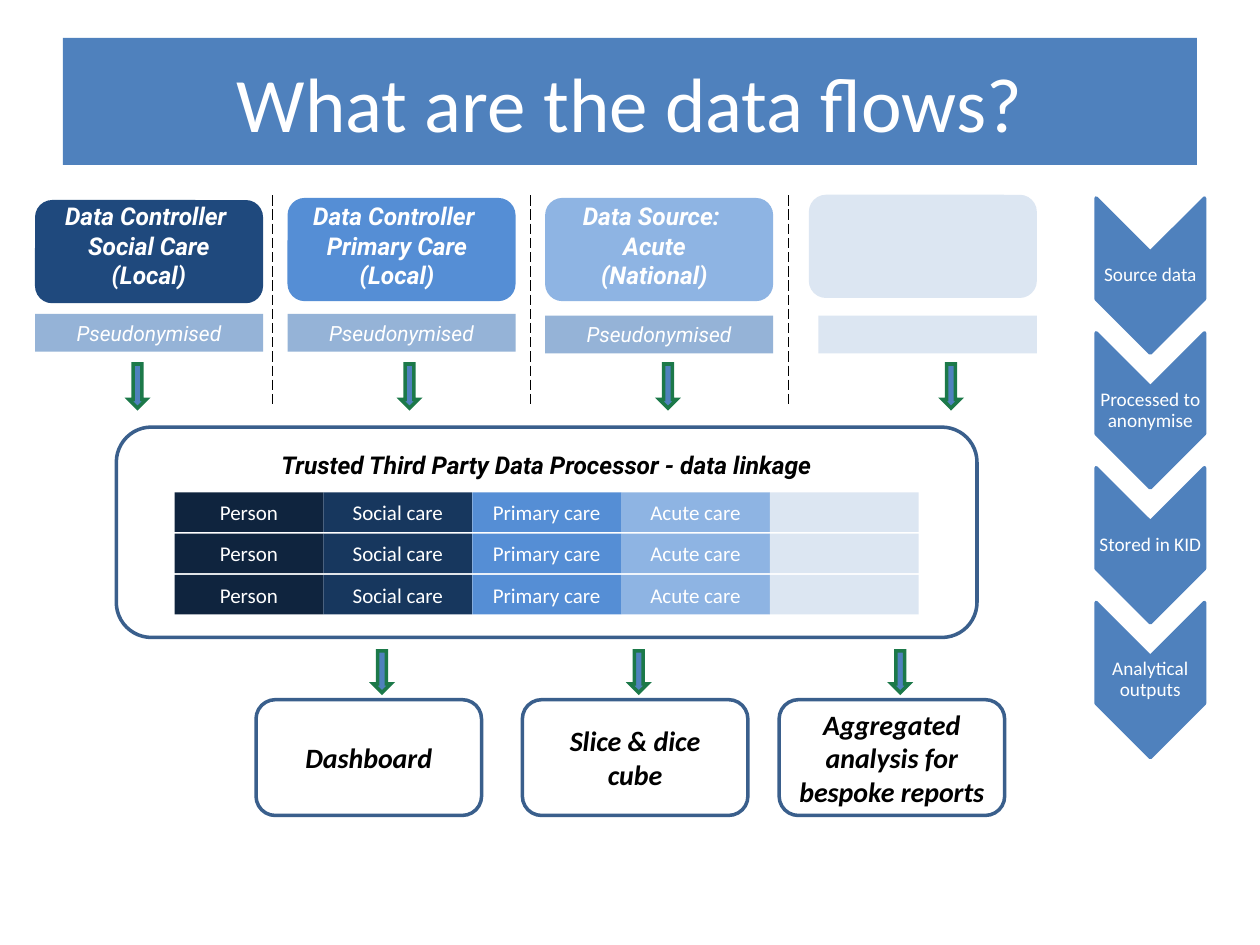
from dataclasses import dataclass

from lxml.etree import SubElement
from pptx import Presentation
from pptx.dml.color import RGBColor
from pptx.enum.dml import MSO_LINE
from pptx.enum.shapes import MSO_CONNECTOR, MSO_SHAPE
from pptx.enum.text import MSO_ANCHOR, PP_ALIGN
from pptx.oxml.ns import qn
from pptx.util import Pt


@dataclass(frozen=True)
class Theme:
    body: str = "Calibri"
    label: str = "Roboto"
    white: str = "FFFFFF"
    black: str = "000000"
    accent: str = "4F81BD"
    outline: str = "3A5F8C"
    arrow_edge: str = "1C7949"
    social: str = "1F497D"
    primary: str = "558ED5"
    acute: str = "8EB4E3"
    other: str = "DCE6F2"
    pseudonym: str = "95B3D7"
    person: str = "0F243E"
    social_cell: str = "17375E"
    title_size: float = 44
    output_size: float = 16
    heading_size: float = 14
    text_size: float = 12
    stage_size: float = 11
    edge: float = 2
    hairline: float = 0.75


@dataclass(frozen=True)
class Box:
    left: float
    top: float
    width: float
    height: float

    def lengths(self):
        return Pt(self.left), Pt(self.top), Pt(self.width), Pt(self.height)


THEME = Theme()


def paint(shape, fill, edge=None):
    shape.shadow.inherit = False
    shape.fill.solid()
    shape.fill.fore_color.rgb = RGBColor.from_string(fill)
    if edge:
        shape.line.color.rgb = RGBColor.from_string(edge)
        shape.line.width = Pt(THEME.edge)
    else:
        shape.line.fill.background()
    return shape


def add_block(slide, preset, box, fill, edge=None):
    return paint(slide.shapes.add_shape(preset, *box.lengths()), fill, edge)


def write(shape, text, size, font=THEME.body, color=THEME.white, bold=False,
          italic=False, anchor=MSO_ANCHOR.MIDDLE, margins=(7.2, 3.6), spacing=None):
    frame = shape.text_frame
    frame.word_wrap = True
    frame.vertical_anchor = anchor
    frame.margin_left = frame.margin_right = Pt(margins[0])
    frame.margin_top = frame.margin_bottom = Pt(margins[1])
    frame.text = text
    for paragraph in frame.paragraphs:
        paragraph.alignment = PP_ALIGN.CENTER
        paragraph.line_spacing = spacing
        paragraph.font.name = font
        paragraph.font.size = Pt(size)
        paragraph.font.bold = bold
        paragraph.font.italic = italic
        paragraph.font.color.rgb = RGBColor.from_string(color)


def add_title(slide, box):
    banner = add_block(slide, MSO_SHAPE.RECTANGLE, box, THEME.accent)
    write(banner, "What are the data flows?", THEME.title_size)


def add_flow_arrow(slide, center, top, height):
    box = Box(center - 5, top, 10, height)
    arrow = add_block(slide, MSO_SHAPE.DOWN_ARROW, box, THEME.accent, THEME.arrow_edge)
    SubElement(arrow.line._get_or_add_ln(), qn("a:miter"), lim="800000")


def add_source(slide, box, heading, heading_left, fill, pseudonym_box, arrow_center):
    add_block(slide, MSO_SHAPE.ROUNDED_RECTANGLE, box, fill)
    pseudonym_fill = THEME.pseudonym if heading else fill
    pseudonym = add_block(slide, MSO_SHAPE.RECTANGLE, pseudonym_box, pseudonym_fill)
    if heading:
        heading_box = Box(heading_left, 111.6, 141.8, 58)
        write(slide.shapes.add_textbox(*heading_box.lengths()), heading,
              THEME.heading_size, THEME.label, bold=True, italic=True,
              anchor=MSO_ANCHOR.TOP)
        write(pseudonym, "Pseudonymised", THEME.text_size, THEME.label, italic=True)
    add_flow_arrow(slide, arrow_center, 208, 25.2)


def add_divider(slide, x, top, bottom):
    divider = slide.shapes.add_connector(
        MSO_CONNECTOR.STRAIGHT, Pt(x), Pt(top), Pt(x), Pt(bottom))
    divider.line.color.rgb = RGBColor.from_string(THEME.black)
    divider.line.width = Pt(THEME.hairline)
    divider.line.dash_style = MSO_LINE.LONG_DASH
    SubElement(divider._element.spPr, qn("a:effectLst"))


def add_sources(slide, box):
    sources = [
        (20, 114.3, "Data Controller \nSocial Care\n(Local)", 14.2, THEME.social, 0, 179.4, 78.6),
        (164.3, 113.1, "Data Controller \nPrimary Care\n(Local)", 156, THEME.primary, 0, 179.4, 234),
        (311.5, 113.1, "Data Source: \nAcute\n(National)", 303.1, THEME.acute, 0, 180.4, 381.7),
        (462.2, 111.3, None, None, THEME.other, 5.5, 180.4, 543.5),
    ]
    width = 130.3
    for left, top, heading, heading_left, fill, indent, pseudonym_top, arrow_center in sources:
        add_source(slide, Box(left, top, width, 59), heading, heading_left, fill,
                   Box(left + indent, pseudonym_top, width - indent, 21.6), arrow_center)
    for x in (155.8, 303.1, 450.7):
        add_divider(slide, x, box.top, box.top + box.height)


def add_processor(slide, box):
    panel = add_block(slide, MSO_SHAPE.ROUNDED_RECTANGLE, box, THEME.white, THEME.outline)
    write(panel, "Trusted Third Party Data Processor - data linkage", THEME.heading_size,
          THEME.label, THEME.black, bold=True, italic=True,
          anchor=MSO_ANCHOR.TOP, margins=(7.2, 7))
    columns = [
        ("Person", THEME.person),
        ("Social care", THEME.social_cell),
        ("Primary care", THEME.primary),
        ("Acute care", THEME.acute),
        (None, THEME.other),
    ]
    cell_width, cell_height, row_pitch = 85.05, 22.6, 23.6
    left = box.left + (box.width - cell_width * len(columns)) / 2
    for row in range(3):
        for column, (category, fill) in enumerate(columns):
            cell_box = Box(left + column * cell_width, box.top + 37.2 + row * row_pitch,
                           cell_width, cell_height)
            cell = add_block(slide, MSO_SHAPE.RECTANGLE, cell_box, fill)
            if category:
                write(cell, category, THEME.text_size)


def add_outputs(slide, box):
    outputs = [
        (146.3, "Dashboard", 218.3),
        (298.5, "Slice & dice cube", 365),
        (445.2, "Aggregated analysis for bespoke reports", 514.4),
    ]
    for left, product, arrow_center in outputs:
        add_flow_arrow(slide, arrow_center, box.top, 23.8)
        output = add_block(slide, MSO_SHAPE.ROUNDED_RECTANGLE,
                           Box(left, box.top + 27.8, 128.9, box.height - 27.8),
                           THEME.white, THEME.outline)
        write(output, product, THEME.output_size, color=THEME.black, bold=True, italic=True)


def add_stage(slide, box, stage):
    notch = box.width / 2
    right, bottom = box.left + box.width, box.top + box.height
    middle = box.left + notch
    outline = [
        (right, bottom - notch), (middle, bottom), (box.left, bottom - notch),
        (box.left, box.top), (middle, box.top + notch),
    ]
    builder = slide.shapes.build_freeform(Pt(right), Pt(box.top))
    builder.add_line_segments([(Pt(x), Pt(y)) for x, y in outline], close=True)
    chevron = paint(builder.convert_to_shape(), THEME.accent, THEME.accent)
    write(chevron, stage, THEME.stage_size, margins=(0.7, notch), spacing=0.9)


def add_stages(slide, box):
    stages = ["Source data", "Processed to anonymise", "Stored in KID", "Analytical outputs"]
    height = 88.6
    pitch = (box.height - height) / (len(stages) - 1)
    for index, stage in enumerate(stages):
        add_stage(slide, Box(box.left, box.top + index * pitch, box.width, height), stage)


def main():
    presentation = Presentation()
    presentation.slide_width, presentation.slide_height = Pt(720), Pt(540)
    slide = presentation.slides.add_slide(presentation.slide_layouts[6])
    add_title(slide, Box(36, 21.6, 648, 72.7))
    add_sources(slide, Box(20, 111.6, 572.5, 120.2))
    add_processor(slide, Box(66.5, 244.1, 491.8, 120.2))
    add_outputs(slide, Box(146.3, 372, 427.8, 94))
    add_stages(slide, Box(626.4, 113.2, 61.9, 319.7))
    presentation.save("out.pptx")


if __name__ == "__main__":
    main()
